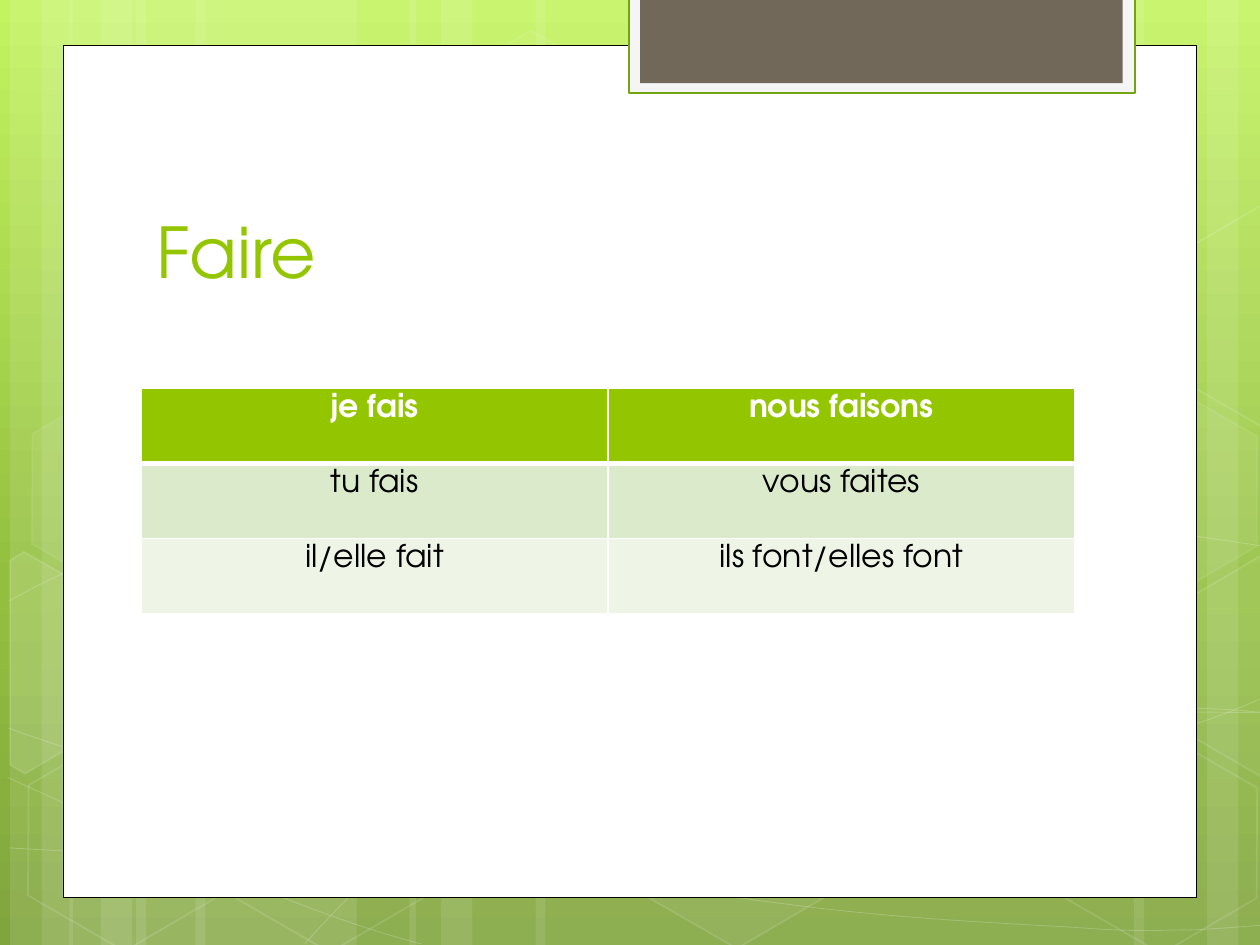
from copy import deepcopy

from lxml import etree
from pptx import Presentation
from pptx.dml.color import RGBColor
from pptx.enum.shapes import MSO_SHAPE
from pptx.enum.text import MSO_ANCHOR, PP_ALIGN
from pptx.oxml.ns import qn
from pptx.util import Inches, Pt

RECT, HEXAGON = MSO_SHAPE.RECTANGLE, MSO_SHAPE.HEXAGON
LEFT, CENTER = PP_ALIGN.LEFT, PP_ALIGN.CENTER
TOP, BOTTOM = MSO_ANCHOR.TOP, MSO_ANCHOR.BOTTOM
FONT = "TeX Gyre Adventor"
WHITE, GREEN = "FFFFFF", "94C600"

BACKGROUND = [(0, "C3F35F"), (62, "93BF3F"), (100, "81A53E")]
STRIPES = [(1.08, 1.75), (0.08, 0.5), (0.33, 0.83), (1.55, 1.75), (0.55, 0.5), (0.8, 0.83),
           (7.33, 1.75), (9.58, 0.5), (9, 0.83), (4.25, 3.08), (3.25, 0.5), (3.5, 0.83)]
CURVES = [
    [(0.07, 6.73), (0.61, 6.76), (1.15, 6.79), (1.9, 6.78), (2.65, 6.77), (3.58, 6.75),
     (4.58, 6.65), (5.58, 6.55), (7, 6.36), (7.92, 6.17), (8.83, 5.98), (9.77, 5.68),
     (10.07, 5.51)],
    [(0.07, 4.77), (0.36, 4.61), (0.65, 4.46), (1.21, 4.31), (1.78, 4.16), (2.59, 3.94),
     (3.47, 3.87), (4.36, 3.8), (5.44, 3.79), (6.54, 3.87), (7.64, 3.95), (9.47, 4.26),
     (10.07, 4.34)],
    [(0.06, 6.17), (1.27, 6.72), (2.47, 7.27), (3.34, 7.49)],
    [(0.07, 5.78), (0.38, 5.89), (0.7, 6), (1.28, 6.16), (1.86, 6.31), (2.73, 6.56),
     (3.57, 6.73), (4.4, 6.9), (5.45, 7.08), (6.28, 7.18), (7.11, 7.29), (8, 7.33),
     (8.53, 7.36), (9.05, 7.4), (9.19, 7.38), (9.45, 7.38), (9.71, 7.37), (9.89, 7.35),
     (10.07, 7.34)],
    [(2.42, 7.49), (2.6, 7.29), (2.78, 7.09), (3.02, 6.91), (3.26, 6.73), (3.6, 6.53),
     (3.88, 6.39), (4.16, 6.25), (4.33, 6.19), (4.7, 6.09), (5.06, 5.99), (5.73, 5.85),
     (6.08, 5.78), (6.44, 5.71), (6.49, 5.71), (6.8, 5.69), (7.11, 5.66), (7.6, 5.63),
     (7.94, 5.62), (8.29, 5.61), (8.86, 5.62), (8.86, 5.62), (9.08, 5.62), (9.31, 5.62),
     (9.53, 5.62), (9.71, 5.63), (9.88, 5.64), (9.97, 5.65), (10.06, 5.66), (10.03, 5.65),
     (10.06, 5.66)],
]
CURVES[4].pop(21)
HEXAGONS = [(3.34, 0.36, 4, 8), (4.97, 5.89, 6, 12), (0.11, 5.91, None, 12),
            (0.14, 3.12, 7, 8), (1.74, 5.92, None, 12), (8.34, 5.93, None, 12),
            (8.34, 3.14, 7, 8)]
CUT_HEXAGONS = [
    ([(0.08, 4.45), (0.19, 4.38), (0.96, 4.82), (0.95, 5.7), (0.2, 6.14), (0.08, 6.07)], 10),
    ([(9.26, 4.85), (10.01, 4.41), (10.09, 4.46), (10.09, 6.13), (10.02, 6.17),
      (9.26, 5.73)], 4),
    ([(9.26, 2.07), (10.01, 1.63), (10.1, 1.68), (10.09, 3.35), (10.02, 3.39),
      (9.26, 2.95)], None),
]
VERBS = [("je fais", "nous faisons"), ("tu fais", "vous faites"),
         ("il/elle fait", "ils font/elles font")]
ROW_FILLS = [GREEN, "DCEACC", "EEF5E7"]


def rgb(color):
    """Turn a hex string into a colour."""
    return RGBColor.from_string(color)


def set_alpha(parent, percent):
    """Make the solid colour directly under parent partly transparent."""
    clr = parent.find(qn("a:solidFill")).find(qn("a:srgbClr"))
    etree.SubElement(clr, qn("a:alpha")).set("val", str(percent * 1000))


def style(shape, fill=None, alpha=None, line=None, width=1, line_alpha=None):
    """Set fill, outline and transparency of a shape."""
    shape.shadow.inherit = False
    if fill:
        shape.fill.solid()
        shape.fill.fore_color.rgb = rgb(fill)
        if alpha:
            set_alpha(shape._element.spPr, alpha)
    else:
        shape.fill.background()
    if line:
        shape.line.color.rgb = rgb(line)
        shape.line.width = Pt(width)
        if line_alpha:
            set_alpha(shape._element.spPr.find(qn("a:ln")), line_alpha)
    else:
        shape.line.fill.background()


def add_box(s, kind, x, y, w, h, **look):
    """Add a preset shape."""
    sp = s.shapes.add_shape(kind, Inches(x), Inches(y), Inches(w), Inches(h))
    style(sp, **look)
    return sp


def add_path(s, points, close, **look):
    """Add a freeform through the points."""
    start, *rest = [(Inches(x), Inches(y)) for x, y in points]
    builder = s.shapes.build_freeform(*start)
    builder.add_line_segments(rest, close=close)
    sp = builder.convert_to_shape()
    style(sp, **look)
    return sp


def add_curve(s, points, **look):
    """Add an open chain of cubic Bezier segments."""
    sp = add_path(s, points, False, **look)
    path = sp._element.find(".//" + qn("a:path"))
    segments = path.findall(qn("a:lnTo"))
    for i in range(0, len(segments), 3):
        bezier = etree.SubElement(path, qn("a:cubicBezTo"))
        for segment in segments[i:i + 3]:
            bezier.append(segment[0])
            path.remove(segment)


def write(tf, text, size=18, color="000000", bold=False, align=LEFT):
    """Write one formatted paragraph into a text frame."""
    tf.word_wrap = True
    p = tf.paragraphs[0]
    p.alignment = align
    r = p.add_run()
    r.text = text
    r.font.name, r.font.size, r.font.bold = FONT, Pt(size), bold
    r.font.color.rgb = rgb(color)


def set_background(s):
    """Fill the slide with a vertical gradient."""
    fill = s.background.fill
    fill.gradient()
    fill.gradient_angle = 270
    stops = s._element.find(".//" + qn("a:gsLst"))
    stops.append(deepcopy(stops[-1]))
    for stop, (position, color) in zip(fill.gradient_stops, BACKGROUND):
        stop.position = position / 100
        stop.color.rgb = rgb(color)


def add_decoration(s):
    """Draw the stripes, curves and hexagons behind the panel."""
    for x, w in STRIPES:
        add_box(s, RECT, x, 0, w, 7.5, fill=WHITE, alpha=10)
    for points in CURVES:
        add_curve(s, points, line=WHITE, width=0.5, line_alpha=20)
    for x, y, alpha, line_alpha in HEXAGONS:
        sp = add_box(s, HEXAGON, x, y, 1.75, 1.52, fill=WHITE if alpha else None,
                     alpha=alpha, line=WHITE, line_alpha=line_alpha)
        sp.adjustments[0] = 0.285
        sp.rotation = 30
    for points, alpha in CUT_HEXAGONS:
        add_path(s, points, True, fill=WHITE if alpha else None, alpha=alpha,
                 line=WHITE, line_alpha=12)


def set_borders(cell, **widths):
    """Give a cell white borders, with widths in points by side."""
    tc_pr = cell._tc.get_or_add_tcPr()
    for side in "LRTB":
        ln = etree.SubElement(tc_pr, qn("a:ln" + side), w=str(Pt(widths.get(side, 1))))
        solid = etree.SubElement(ln, qn("a:solidFill"))
        etree.SubElement(solid, qn("a:srgbClr"), val=WHITE)


def add_verb_table(s):
    """Add the conjugation table."""
    table = s.shapes.add_table(3, 2, Inches(1.12), Inches(3.08), Inches(7.41),
                               Inches(1.79)).table
    for i, verbs in enumerate(VERBS):
        header = i == 0
        for j, verb in enumerate(verbs):
            cell = table.cell(i, j)
            cell.vertical_anchor = TOP
            set_borders(cell, T=3 if i == 1 else 1, B=3 if header else 1)
            cell.fill.solid()
            cell.fill.fore_color.rgb = rgb(ROW_FILLS[i])
            write(cell.text_frame, verb, color=WHITE if header else "000000",
                  bold=header, align=CENTER)


def add_title(s, text):
    """Add the slide title."""
    tf = s.shapes.add_textbox(Inches(1.14), Inches(1.12), Inches(7.68),
                              Inches(1.25)).text_frame
    tf.vertical_anchor = BOTTOM
    write(tf, text, size=40, color=GREEN)


def main():
    """Build the slide and save it."""
    prs = Presentation()
    prs.slide_width, prs.slide_height = Inches(10), Inches(7.5)
    s = prs.slides.add_slide(prs.slide_layouts[6])
    set_background(s)
    add_decoration(s)
    add_box(s, RECT, 0.5, 0.36, 9, 6.76, fill=WHITE, line="000000", width=0.5)
    add_box(s, RECT, 4.99, -0.02, 4.02, 0.76, fill="F5F5F5", line="74A510", width=1.25)
    add_box(s, RECT, 5.08, -0.02, 3.83, 0.68, fill="71685A")
    add_title(s, "Faire")
    add_verb_table(s)
    prs.save("out.pptx")


if __name__ == "__main__":
    main()
